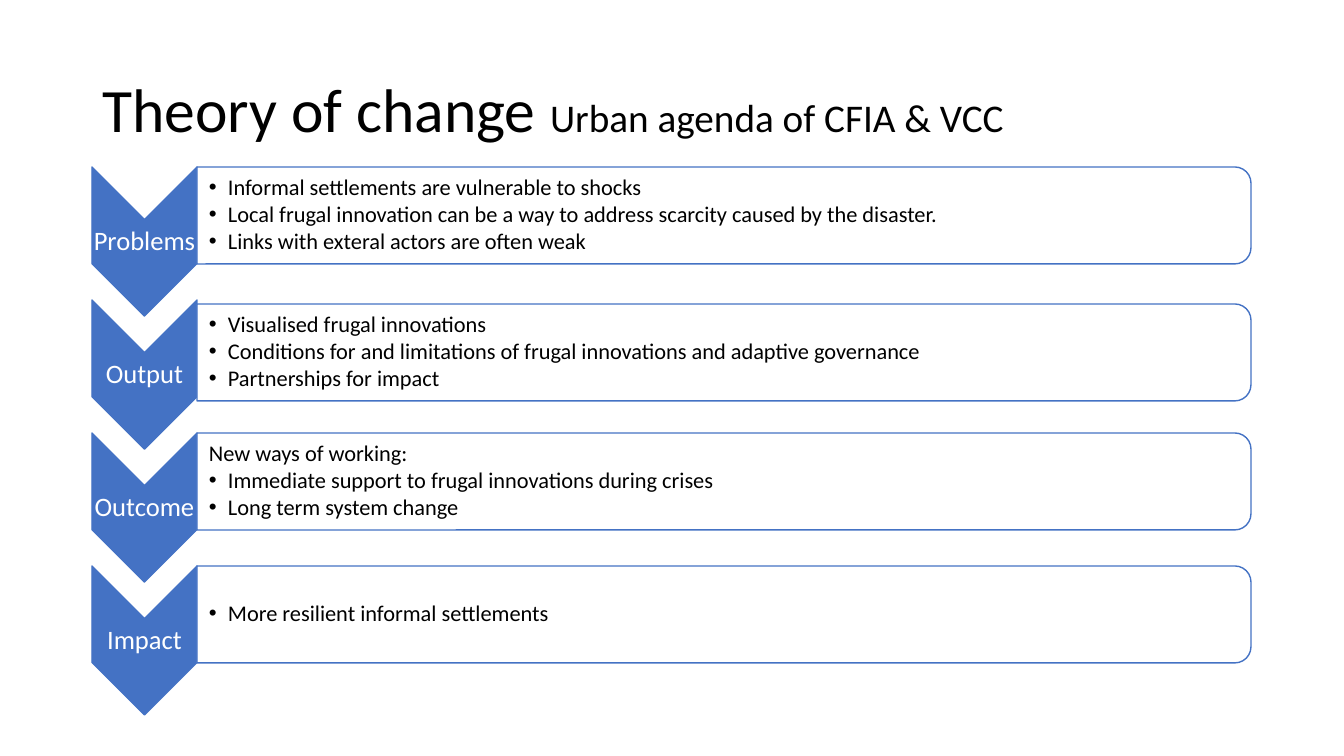
"""Build the theory of change slide: four labelled chevrons beside text panels."""
from lxml.etree import SubElement
from pptx import Presentation
from pptx.dml.color import RGBColor
from pptx.enum.shapes import MSO_SHAPE
from pptx.enum.text import MSO_ANCHOR, MSO_AUTO_SIZE, PP_ALIGN
from pptx.oxml.ns import qn
from pptx.util import Emu, Pt

TITLE = [("Theory of change ", 44), ("Urban agenda of CFIA & VCC", 28)]
STAGES = [
    ("Problems", 167, None, [
        "Informal settlements are vulnerable to shocks",
        "Local frugal innovation can be a way to address scarcity caused by the disaster.",
        "Links with exteral actors are often weak"]),
    ("Output", 304, None, [
        "Visualised frugal innovations",
        "Conditions for and limitations of frugal innovations and adaptive governance",
        "Partnerships for impact"]),
    ("Outcome", 433, "New ways of working:", [
        "Immediate support to frugal innovations during crises",
        "Long term system change"]),
    ("Impact", 566, None, ["More resilient informal settlements"]),
]

BLUE = RGBColor(0x44, 0x72, 0xC4)
WHITE = RGBColor(0xFF, 0xFF, 0xFF)
BLACK = RGBColor(0, 0, 0)
FONT = "Calibri"

SLIDE_WIDTH, SLIDE_HEIGHT = 1344, 756
SCALE = 12192000 / SLIDE_WIDTH
CHEVRON_LEFT, CHEVRON_TOP, CHEVRON_PITCH = 92, 167, 133
CHEVRON_WIDTH, CHEVRON_HEIGHT = 105, 149
LABEL_HEIGHT = 44
PANEL_LEFT = CHEVRON_LEFT + CHEVRON_WIDTH
PANEL_WIDTH, PANEL_HEIGHT = 1054, 97
PANEL_PADDING = 4
INDENT = 19


def px(length):
    return Emu(round(length * SCALE))


def add_turned_shape(page, kind, left, top, width, height, fill):
    """Add a shape turned by 90 degrees that covers the given area."""
    shift = (width - height) / 2
    shape = page.shapes.add_shape(
        kind, px(left + shift), px(top - shift), px(height), px(width))
    shape.rotation = 90
    shape.shadow.inherit = False
    shape.fill.solid()
    shape.fill.fore_color.rgb = fill
    shape.line.color.rgb = BLUE
    shape.line.width = Pt(1)
    return shape


def format_paragraph(para, size, color, align):
    para.font.name = FONT
    para.font.size = Pt(size)
    para.font.color.rgb = color
    para.alignment = align
    para.line_spacing = 0.9


def add_text(page, area, lines, size, color, align, left_inset=1):
    """Add a middle-anchored text box and return its paragraphs."""
    box = page.shapes.add_textbox(*map(px, area))
    frame = box.text_frame
    frame.word_wrap = True
    frame.vertical_anchor = MSO_ANCHOR.MIDDLE
    frame.margin_left = px(left_inset)
    frame.margin_top = frame.margin_right = frame.margin_bottom = px(1)
    frame.text = "\n".join(lines)
    for para in frame.paragraphs:
        format_paragraph(para, size, color, align)
    return frame.paragraphs


def add_bullet(para):
    properties = para._p.get_or_add_pPr()
    properties.set("marL", str(px(INDENT)))
    properties.set("indent", str(-px(INDENT)))
    SubElement(properties, qn("a:buFont")).set("typeface", "Arial")
    SubElement(properties, qn("a:buChar")).set("char", "•")
    default_run = properties.find(qn("a:defRPr"))
    if default_run is not None:
        properties.append(default_run)


def add_title(page):
    title = page.shapes.title
    title.left, title.top, title.width, title.height = map(px, (92, 40, 1159, 146))
    frame = title.text_frame
    frame.word_wrap = True
    frame.auto_size = MSO_AUTO_SIZE.NONE
    frame.vertical_anchor = MSO_ANCHOR.MIDDLE
    para = frame.paragraphs[0]
    format_paragraph(para, TITLE[0][1], BLACK, PP_ALIGN.LEFT)
    for text, size in TITLE:
        span = para.add_run()
        span.text = text
        span.font.size = Pt(size)


def add_stage(page, index, label, panel_top, heading, bullets):
    chevron_top = CHEVRON_TOP + index * CHEVRON_PITCH
    add_turned_shape(page, MSO_SHAPE.CHEVRON, CHEVRON_LEFT, chevron_top,
                     CHEVRON_WIDTH, CHEVRON_HEIGHT, BLUE)
    label_top = chevron_top + (CHEVRON_HEIGHT - LABEL_HEIGHT) / 2
    add_text(page, (CHEVRON_LEFT, label_top, CHEVRON_WIDTH, LABEL_HEIGHT),
             [label], 19, WHITE, PP_ALIGN.CENTER)

    panel = add_turned_shape(page, MSO_SHAPE.ROUND_2_SAME_RECTANGLE, PANEL_LEFT,
                             panel_top, PANEL_WIDTH, PANEL_HEIGHT, WHITE)
    color = panel._element.spPr.find(qn("a:solidFill")).find(qn("a:srgbClr"))
    SubElement(color, qn("a:alpha")).set("val", "90000")

    lines = ([heading] if heading else []) + bullets
    area = (PANEL_LEFT, panel_top + PANEL_PADDING,
            PANEL_WIDTH - PANEL_PADDING, PANEL_HEIGHT - 2 * PANEL_PADDING)
    paragraphs = add_text(page, area, lines, 16, BLACK, PP_ALIGN.LEFT, 12)
    for para in paragraphs:
        para.space_after = Pt(2)
    for para in paragraphs[-len(bullets):]:
        add_bullet(para)


def main():
    deck = Presentation()
    deck.slide_width, deck.slide_height = px(SLIDE_WIDTH), px(SLIDE_HEIGHT)
    page = deck.slides.add_slide(deck.slide_layouts[5])
    add_title(page)
    for index, stage in enumerate(STAGES):
        add_stage(page, index, *stage)
    deck.save("out.pptx")


if __name__ == "__main__":
    main()
